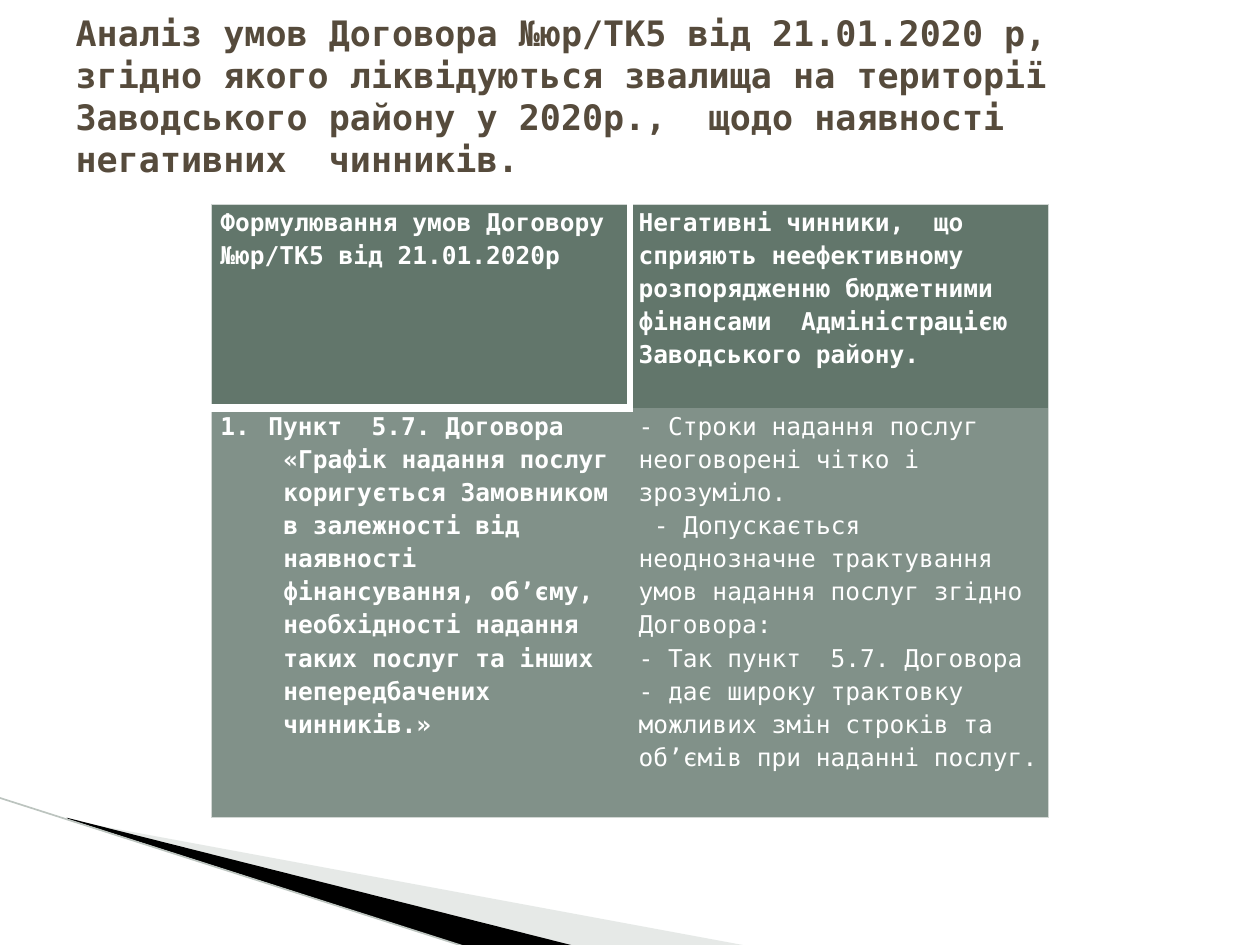
import pptx
import pptx.util
import pptx.oxml
import pptx.oxml.ns
import pptx.dml.color
import pptx.enum.shapes
import pptx.enum.text
from dataclasses import dataclass

Inches = pptx.util.Inches
Pt = pptx.util.Pt
qn = pptx.oxml.ns.qn
NS = pptx.oxml.ns.nsdecls("a")


def tint(code):
    return pptx.dml.color.RGBColor.from_string(code)


@dataclass
class Theme:
    font: str = "DejaVu Sans Mono"
    title: str = "564B3C"
    text: str = "FFFFFF"
    head: str = "62766B"
    body: str = "819189"
    edge: str = "D2D7D4"
    pale: str = "C1CAC5"
    dark: str = "000000"
    line: str = "BCC4BF"
    big: int = 20
    small: int = 14


class Deck:
    def __init__(self, theme):
        self.theme = theme
        self.file = pptx.Presentation()
        self.file.slide_width = Inches(10)
        self.file.slide_height = Inches(7.5)
        self.slide = self.file.slides.add_slide(self.file.slide_layouts[5])

    def add_text(self, para, text, size, color, bold):
        run = para.add_run()
        run.text = text
        run.font.name = self.theme.font
        run.font.size = Pt(size)
        run.font.bold = bold
        run.font.color.rgb = tint(color)

    def title(self, text, box):
        shape = self.slide.shapes.title
        shape.left, shape.top, shape.width, shape.height = map(Inches, box)
        frame = shape.text_frame
        frame.word_wrap = True
        frame.auto_size = pptx.enum.text.MSO_AUTO_SIZE.NONE
        frame.vertical_anchor = pptx.enum.text.MSO_ANCHOR.MIDDLE
        frame.margin_bottom = Inches(0.38)
        para = frame.paragraphs[0]
        para.alignment = pptx.enum.text.PP_ALIGN.LEFT
        self.add_text(para, text, self.theme.big, self.theme.title, True)

    def wedge(self, points, color, alpha=None):
        start, *rest = [(Inches(x), Inches(y)) for x, y in points]
        pen = self.slide.shapes.build_freeform(*start)
        pen.add_line_segments(rest, close=True)
        shape = pen.convert_to_shape()
        shape.shadow.inherit = False
        shape.line.fill.background()
        shape.fill.solid()
        shape.fill.fore_color.rgb = tint(color)
        if alpha:
            node = shape._element.spPr.find(qn("a:solidFill"))[0]
            node.append(pptx.oxml.parse_xml(f'<a:alpha {NS} val="{alpha * 1000}"/>'))

    def line(self, start, end, color, width):
        kind = pptx.enum.shapes.MSO_CONNECTOR.STRAIGHT
        link = self.slide.shapes.add_connector(kind, *map(Inches, start + end))
        link.line.color.rgb = tint(color)
        link.line.width = Pt(width)
        link._element.spPr.append(pptx.oxml.parse_xml(f"<a:effectLst {NS}/>"))

    def table(self, spot, cols, rows):
        frame = self.slide.shapes.add_table(
            len(rows), len(cols), *map(Inches, spot + (sum(cols), sum(rows))))
        grid = frame.table
        for col, width in zip(grid.columns, cols):
            col.width = Inches(width)
        for row, height in zip(grid.rows, rows):
            row.height = Inches(height)
        return grid

    def cell(self, cell, paras, fill, edges, bold):
        cell.margin_left = cell.margin_right = Inches(0.07)
        cell.margin_top = cell.margin_bottom = 0
        props = cell._tc.get_or_add_tcPr()
        for side, (color, width) in zip("LRTB", edges):
            paint = "<a:noFill/>"
            if color:
                paint = f'<a:solidFill><a:srgbClr val="{color}"/></a:solidFill>'
            props.append(pptx.oxml.parse_xml(
                f'<a:ln{side} {NS} w="{Pt(width)}">{paint}</a:ln{side}>'))
        cell.fill.solid()
        cell.fill.fore_color.rgb = tint(fill)
        frame = cell.text_frame
        for i, (text, left, hang, after, mark) in enumerate(paras):
            para = frame.add_paragraph() if i else frame.paragraphs[0]
            para.line_spacing = 1.15
            para.space_after = Pt(after)
            pad = para._p.get_or_add_pPr()
            pad.set("marL", str(Inches(left)))
            pad.set("indent", str(Inches(hang)))
            if mark:
                pad.append(pptx.oxml.parse_xml(f'<a:buFont {NS} typeface="+mj-lt"/>'))
                pad.append(pptx.oxml.parse_xml(f'<a:buAutoNum {NS} type="{mark}"/>'))
            self.add_text(para, text, self.theme.small, self.theme.text, bold)


def main():
    theme = Theme()
    deck = Deck(theme)
    deck.wedge([(0.55, 6.51), (5.95, 7.51), (4.56, 7.51), (0.55, 6.5)], theme.pale, 40)
    deck.wedge([(0.53, 6.49), (4.57, 7.51), (3.72, 7.52), (0.54, 6.5)], theme.dark)
    deck.line((-0.01, 6.33), (3.71, 7.52), theme.line, 0.95)
    deck.title(
        "Аналіз умов Договора №юр/ТК5 від 21.01.2020 р, згідно якого ліквідуються "
        "звалища на території Заводського району у 2020р.,  щодо наявності "
        "негативних  чинників.", (0.5, 0.3, 9, 1.25))

    grid = deck.table((1.68, 1.62), (3.32, 3.32), (1.62, 3.25))
    thin, bar, rule, none = (theme.edge, 0.75), (theme.text, 4.33), (theme.text, 5), (None, 0)
    cells = [
        (0, 0, theme.head, (thin, bar, thin, rule), True, [
            ("Формулювання умов Договору №юр/ТК5 від 21.01.2020р", 0, 0, 10, None)]),
        (0, 1, theme.head, (bar, thin, thin, none), True, [
            ("Негативні чинники,  що сприяють неефективному розпорядженню бюджетними "
             "фінансами  Адміністрацією Заводського району.", 0, 0, 10, None)]),
        (1, 0, theme.body, (thin, none, rule, thin), True, [
            ("Пункт  5.7. Договора", 0.38, -0.38, 0, "arabicPeriod"),
            ("«Графік надання послуг коригується Замовником в залежності від наявності "
             "фінансування, об’єму, необхідності надання таких послуг та інших "
             "непередбачених чинників.»", 0.5, 0, 0, None)]),
        (1, 1, theme.body, (none, thin, none, thin), False, [
            ("- Строки надання послуг неоговорені чітко і зрозуміло.", 0, 0, 0, None),
            ("- Допускається неоднозначне трактування умов надання послуг згідно "
             "Договора:", 0, 0.12, 0, None),
            ("- Так пункт  5.7. Договора - дає широку трактовку можливих змін строків "
             "та об’ємів при наданні послуг.", 0, 0, 10, None)]),
    ]
    for row, col, fill, edges, bold, paras in cells:
        deck.cell(grid.cell(row, col), paras, fill, edges, bold)
    deck.file.save("out.pptx")


if __name__ == "__main__":
    main()
